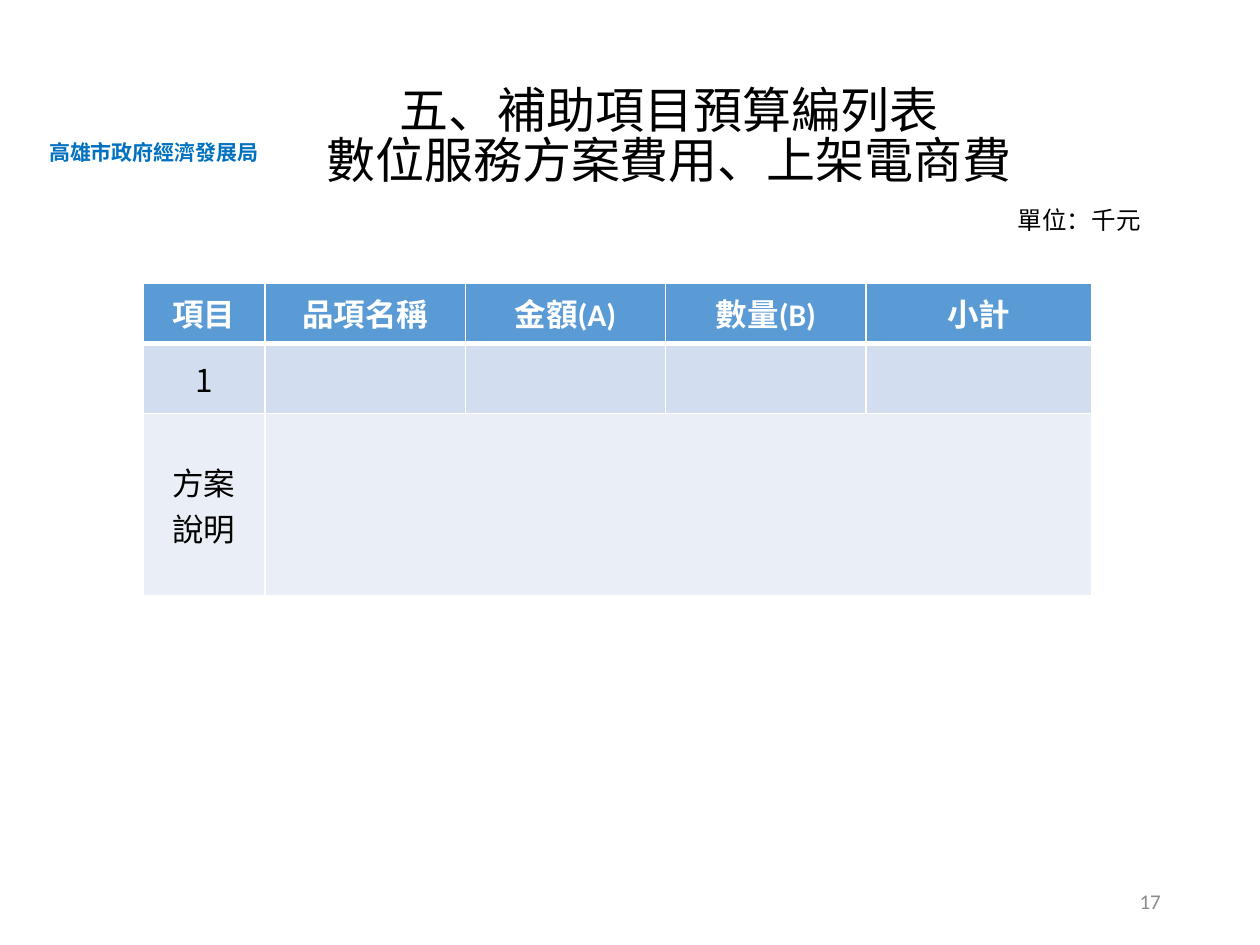
from lxml import etree
from pptx import Presentation
from pptx import util as u
from pptx.dml.color import RGBColor
from pptx.enum import text as t
from pptx.oxml import ns

CJK = "Noto Sans CJK SC"
MID = t.MSO_ANCHOR.MIDDLE
LEFT, CENTER, RIGHT = t.PP_ALIGN.LEFT, t.PP_ALIGN.CENTER, t.PP_ALIGN.RIGHT


def tint(color, code):
    color.rgb = RGBColor.from_string(code)


def write(frame, lines, size, code, align=LEFT, bold=False, face=CJK, gap=None):
    for i, line in enumerate(lines):
        para = frame.add_paragraph() if i else frame.paragraphs[0]
        para.alignment = align
        if gap:
            para.line_spacing = gap
        run = para.add_run()
        run.text = line
        run.font.size = u.Pt(size)
        run.font.bold = bold
        run.font.name = face
        tint(run.font.color, code)
        # East Asian glyphs keep the CJK face
        east = etree.SubElement(run.font._element, ns.qn("a:ea"))
        east.set("typeface", CJK)


deck = Presentation()
deck.slide_width, deck.slide_height = u.Cm(25.4), u.Cm(19.05)
slide = deck.slides.add_slide(deck.slide_layouts[6])

# Text boxes: place, lines, anchor, wrap, style
top = t.MSO_ANCHOR.TOP
boxes = [
    ((0.74, 2.69, 4.78, 0.76), ["高雄市政府經濟發展局"], top, False,
     dict(size=12, code="0070C0", bold=True)),
    ((3.78, 1.12, 19.41, 3.33), ["五、補助項目預算編列表", "數位服務方案費用、上架電商費"], MID, True,
     dict(size=28, code="000000", align=CENTER, gap=0.85)),
    ((20.27, 4.01, 12.7, 0.86), ["單位：千元"], top, True,
     dict(size=14, code="000000")),
    ((17.93, 17.65, 5.72, 1.02), ["17"], MID, True,
     dict(size=12, code="8C8C8C", align=RIGHT, face="Calibri")),
]
for place, lines, anchor, wrap, style in boxes:
    frame = slide.shapes.add_textbox(*map(u.Cm, place)).text_frame
    frame.word_wrap = wrap
    frame.vertical_anchor = anchor
    write(frame, lines, **style)

# Budget table
wide = [2.46, 4.04, 4.04, 4.04, 4.55]
high = [1.22, 1.42, 3.66]
fills = ["5B9BD5", "D2DEEF", "EAEFF7"]
heads = ["項目", "品項名稱", "金額(A)", "數量(B)", "小計"]
table = slide.shapes.add_table(
    len(high), len(wide), u.Cm(2.88), u.Cm(5.7),
    u.Cm(sum(wide)), u.Cm(sum(high))).table
for col, width in zip(table.columns, wide):
    col.width = u.Cm(width)
for row, height in zip(table.rows, high):
    row.height = u.Cm(height)

# Cell fills and white rules, thicker under the header
for r, code in enumerate(fills):
    for c in range(len(wide)):
        cell = table.cell(r, c)
        cell.vertical_anchor = MID
        cell.fill.solid()
        tint(cell.fill.fore_color, code)
        props = cell._tc.get_or_add_tcPr()
        for i, side in enumerate("LRTB"):
            thick = (r, side) in [(0, "B"), (1, "T")]
            line = etree.Element(ns.qn("a:ln" + side), w=str(u.Pt(3 if thick else 1)))
            paint = etree.SubElement(line, ns.qn("a:solidFill"))
            etree.SubElement(paint, ns.qn("a:srgbClr"), val="FFFFFF")
            props.insert(i, line)
table.cell(2, 1).merge(table.cell(2, 4))

# Cell text
for c, head in enumerate(heads):
    face = "Calibri" if "(" in head else CJK
    write(table.cell(0, c).text_frame, [head], 18, "FFFFFF", CENTER, True, face)
for r, lines in enumerate([["1"], ["方案", "說明"]], 1):
    write(table.cell(r, 0).text_frame, lines, 18, "000000", CENTER)

deck.save("out.pptx")
